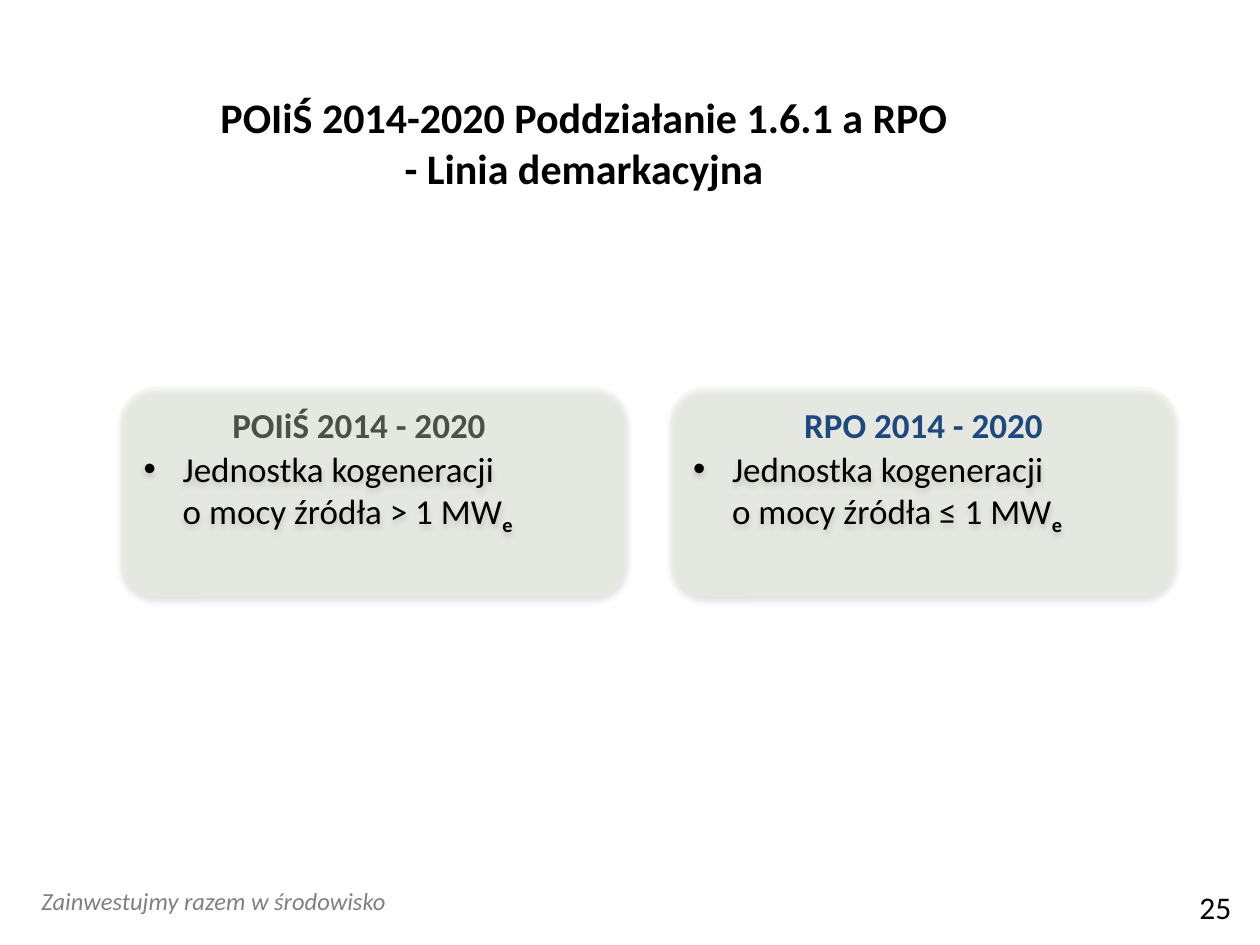
from dataclasses import dataclass
from typing import Optional

from lxml.etree import SubElement
from pptx import Presentation
from pptx.dml.color import RGBColor
from pptx.enum.shapes import MSO_SHAPE
from pptx.enum.text import MSO_ANCHOR, PP_ALIGN
from pptx.oxml.ns import qn
from pptx.util import Inches, Pt


@dataclass(frozen=True)
class Theme:
    font: str = "Calibri"
    ink: str = "000000"
    blue: str = "1F497D"
    grey: str = "808080"
    card: str = "EBF1DE"
    title_size: int = 24
    body_size: int = 20
    number_size: int = 18
    footer_size: int = 14


@dataclass(frozen=True)
class Frame:
    """Position and size in percent of the slide's width and height."""
    left: float
    top: float
    width: float
    height: float

    def lengths(self) -> list[int]:
        shares = ((self.left, WIDTH), (self.top, HEIGHT),
                  (self.width, WIDTH), (self.height, HEIGHT))
        return [int(side * share / 100) for share, side in shares]


@dataclass(frozen=True)
class Label:
    frame: Frame
    text: str
    size: int
    color: str = "000000"
    bold: bool = False
    italic: bool = False
    align: Optional[PP_ALIGN] = None


@dataclass(frozen=True)
class Programme:
    heading: str
    heading_left: float
    heading_color: str
    limit: str
    heading_behind: bool


THEME = Theme()
WIDTH, HEIGHT = Inches(10), Inches(7.5)
CARD_LEFT, CARD_STEP = 9.6, 43.6

PROGRAMMES = (
    Programme("POIiŚ 2014 - 2020", 15.4, THEME.ink, "> 1 MW", True),
    Programme("RPO 2014 - 2020", 60.2, THEME.blue, "≤ 1 MW", False),
)
FOOTER = Label(Frame(2.3, 93.07, 42.2, 4.53), "Zainwestujmy razem w środowisko",
               THEME.footer_size, THEME.grey, italic=True)
NUMBER = Label(Frame(94.2, 93.33, 5.9, 3.87), "25", THEME.number_size)
TITLE = Label(Frame(9.1, 9.07, 74.5, 12.13),
              "POIiŚ 2014-2020 Poddziałanie 1.6.1 a RPO\n- Linia demarkacyjna",
              THEME.title_size, bold=True, align=PP_ALIGN.CENTER)


def style_run(run, size: int, color: str, bold: bool = False, italic: bool = False) -> None:
    run.font.name = THEME.font
    run.font.size = Pt(size)
    run.font.bold = bold
    run.font.italic = italic
    run.font.color.rgb = RGBColor.from_string(color)


def draw_label(slide, label: Label) -> None:
    frame = slide.shapes.add_textbox(*label.frame.lengths()).text_frame
    frame.word_wrap = True
    frame.text = label.text
    for paragraph in frame.paragraphs:
        paragraph.alignment = label.align
        for run in paragraph.runs:
            style_run(run, label.size, label.color, label.bold, label.italic)


def add_shadow(shape) -> None:
    effects = SubElement(shape._element.spPr, qn("a:effectLst"))
    shadow = SubElement(effects, qn("a:outerShdw"), blurRad=str(Pt(3.5)),
                        dist=str(Pt(2.2)), dir="5400000", rotWithShape="0")
    color = SubElement(shadow, qn("a:srgbClr"), val=THEME.ink)
    SubElement(color, qn("a:alpha"), val="32000")


def add_bullet(paragraph) -> None:
    properties = paragraph._p.get_or_add_pPr()
    properties.set("marL", str(Inches(0.31)))
    properties.set("indent", str(-Inches(0.31)))
    SubElement(properties, qn("a:buFont"), typeface="Arial")
    SubElement(properties, qn("a:buChar"), char="•")


def draw_card(slide, frame: Frame, limit: str) -> None:
    card = slide.shapes.add_shape(MSO_SHAPE.ROUNDED_RECTANGLE, *frame.lengths())
    card.fill.solid()
    card.fill.fore_color.rgb = RGBColor.from_string(THEME.card)
    fill_color = card._element.spPr.find(qn("a:solidFill"))[0]
    SubElement(fill_color, qn("a:alpha"), val="33000")
    card.line.fill.background()
    add_shadow(card)

    # Bulleted limit with its subscript
    card.text_frame.vertical_anchor = MSO_ANCHOR.MIDDLE
    criterion = card.text_frame.paragraphs[0]
    criterion.text = f"Jednostka kogeneracji\no mocy źródła {limit}"
    criterion.alignment = PP_ALIGN.LEFT
    add_bullet(criterion)
    for run in criterion.runs:
        style_run(run, THEME.body_size, THEME.ink)
    subscript = criterion.add_run()
    subscript.text = "e"
    style_run(subscript, THEME.body_size, THEME.ink, bold=True)
    subscript._r.get_or_add_rPr().set("baseline", "-25000")


def draw_programme(slide, column: int, programme: Programme) -> None:
    heading = Label(Frame(programme.heading_left, 42, 26.2, 5.87), programme.heading,
                    THEME.body_size, programme.heading_color, bold=True,
                    align=PP_ALIGN.CENTER)
    card_frame = Frame(CARD_LEFT + column * CARD_STEP, 40.93, 40.2, 22.27)
    if programme.heading_behind:
        draw_label(slide, heading)
    draw_card(slide, card_frame, programme.limit)
    if not programme.heading_behind:
        draw_label(slide, heading)


def main() -> None:
    deck = Presentation()
    deck.slide_width, deck.slide_height = WIDTH, HEIGHT
    slide = deck.slides.add_slide(deck.slide_layouts[6])

    # Footer
    draw_label(slide, FOOTER)

    # Two programmes side by side
    for column, programme in enumerate(PROGRAMMES):
        draw_programme(slide, column, programme)

    # Page number and title
    draw_label(slide, NUMBER)
    draw_label(slide, TITLE)

    deck.save("out.pptx")


if __name__ == "__main__":
    main()
